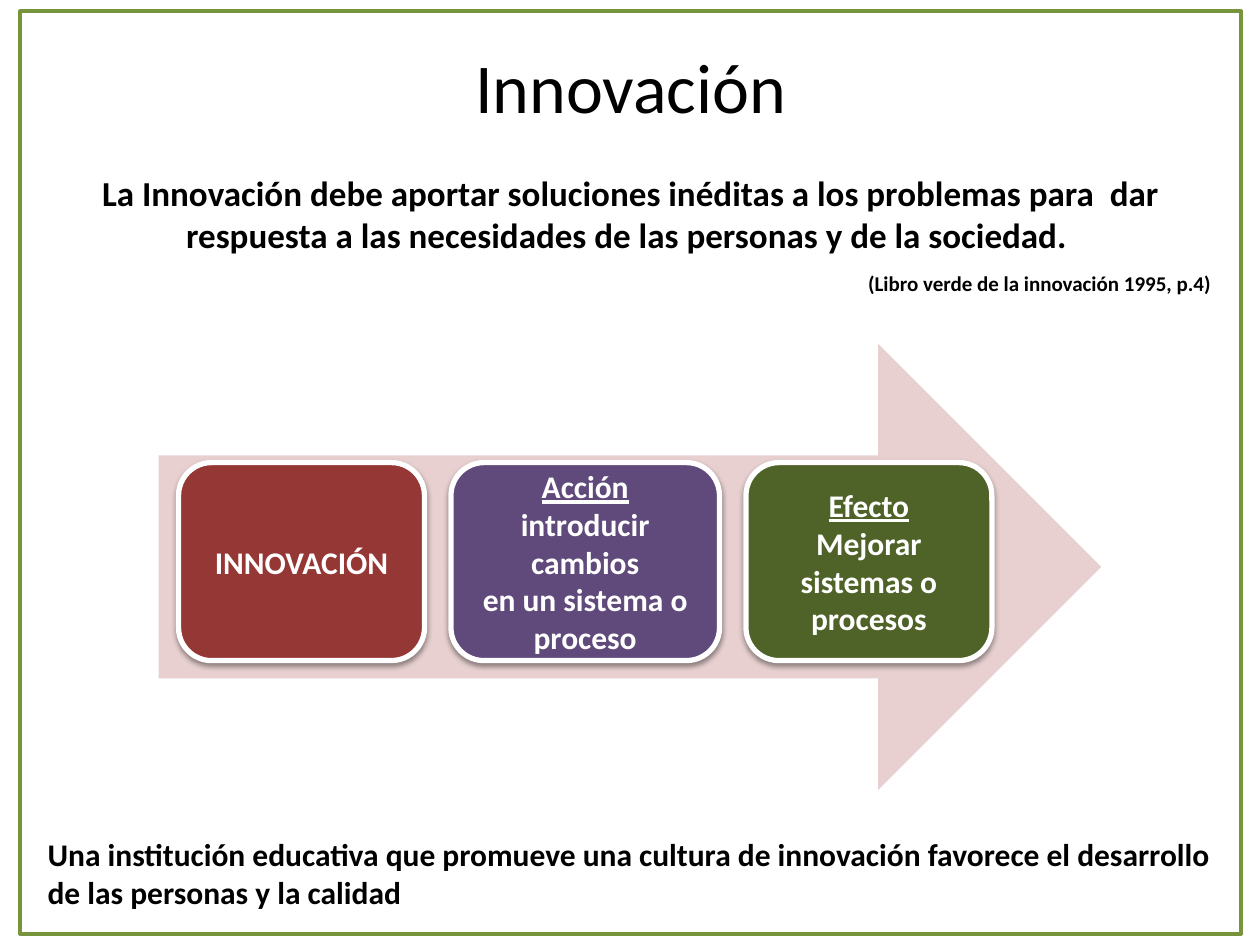
from lxml import etree
from pptx import Presentation
from pptx.dml.color import RGBColor
from pptx.enum import shapes, text
from pptx.oxml import ns
from pptx.util import Inches, Pt

FONT = "Calibri"
COLORS = {
    "ink": "000000", "white": "FFFFFF", "frame": "77933C", "arrow": "E8D0D0",
    "red": "953735", "purple": "604A7B", "green": "4F6228",
}
W, H = 10, 7.5  # slide size in inches
CARD_GAP = 0.028  # share of the arrow's width
CARDS = [  # fill, share of the arrow's width, heading, lines
    ("red", 0.261, None, ["INNOVACIÓN"]),
    ("purple", 0.285, "Acción", ["introducir cambios", "en un sistema o proceso"]),
    ("green", 0.261, "Efecto", ["Mejorar sistemas o procesos"]),
]


def rgb(name):
    return RGBColor.from_string(COLORS[name])


def inside(box, x, y, w, h):
    """Box given as shares of another box."""
    left, top, width, height = box
    return left + x * width, top + y * height, w * width, h * height


def add_text(tf, words, size=18, color="ink", bold=True, underline=False,
             align=text.PP_ALIGN.CENTER, first=True):
    p = tf.paragraphs[0] if first else tf.add_paragraph()
    p.alignment = align
    r = p.add_run()
    r.text = words
    r.font.name, r.font.size = FONT, Pt(size)
    r.font.bold, r.font.underline = bold, underline
    r.font.color.rgb = rgb(color)


def add_textbox(slide, box, words, wrap=True, anchor=text.MSO_ANCHOR.TOP, **fmt):
    tf = slide.shapes.add_textbox(*map(Inches, box)).text_frame
    tf.word_wrap, tf.vertical_anchor = wrap, anchor
    add_text(tf, words, **fmt)


def add_shape(slide, kind, box, fill=None, line=None, width=1):
    sp = slide.shapes.add_shape(kind, *map(Inches, box))
    sp.shadow.inherit = False
    if fill:
        sp.fill.solid()
        sp.fill.fore_color.rgb = rgb(fill)
    else:
        sp.fill.background()
    if line:
        sp.line.color.rgb, sp.line.width = rgb(line), Pt(width)
    else:
        sp.line.fill.background()
    return sp


def add_shadow(sp):
    effects = sp._element.spPr.find(ns.qn("a:effectLst"))
    shadow = etree.SubElement(effects, ns.qn("a:outerShdw"), blurRad=str(Pt(3.1)),
                              dist=str(Pt(1.6)), dir="5400000", rotWithShape="0")
    color = etree.SubElement(shadow, ns.qn("a:srgbClr"), val=COLORS["ink"])
    etree.SubElement(color, ns.qn("a:alpha"), val="38000")


def add_header(slide, box):
    # Title, statement and its source
    add_textbox(slide, inside(box, 0, 0, 1, 0.4), "Innovación", size=40, bold=False,
                anchor=text.MSO_ANCHOR.MIDDLE)
    add_textbox(slide, inside(box, 0, 0.4, 1, 0.26),
                "La Innovación debe aportar soluciones inéditas a los problemas para  dar "
                "respuesta a las necesidades de las personas y de la sociedad. ", size=20)
    add_textbox(slide, inside(box, 0.68, 0.65, 0.31, 0.1),
                "(Libro verde de la innovación 1995, p.4)", wrap=False, size=12)


def add_card(slide, box, fill, heading, lines):
    sp = add_shape(slide, shapes.MSO_SHAPE.ROUNDED_RECTANGLE, box, fill, "white", 3)
    add_shadow(sp)
    tf = sp.text_frame
    tf.word_wrap, tf.vertical_anchor = True, text.MSO_ANCHOR.MIDDLE
    tf.margin_left = tf.margin_right = tf.margin_top = tf.margin_bottom = Inches(0.14)
    if heading:
        add_text(tf, heading, color="white", underline=True)
    for i, words in enumerate(lines):
        add_text(tf, words, color="white", first=not heading and i == 0)


def add_process(slide, box):
    # Arrow with the cards laid along it at equal gaps
    add_shape(slide, shapes.MSO_SHAPE.RIGHT_ARROW, box, "arrow")
    x = 0.021
    for fill, share, heading, lines in CARDS:
        add_card(slide, inside(box, x, 0.266, share, 0.444), fill, heading, lines)
        x += share + CARD_GAP


def add_closing(slide, box):
    add_textbox(slide, box,
                "Una institución educativa que promueve una cultura de innovación "
                "favorece el desarrollo de las personas y la calidad",
                align=text.PP_ALIGN.LEFT)


def main():
    prs = Presentation()
    prs.slide_width, prs.slide_height = Inches(W), Inches(H)
    slide = prs.slides.add_slide(prs.slide_layouts[6])
    page = (0, 0, W, H)
    add_header(slide, inside(page, 0.016, 0.007, 0.969, 0.42))
    add_process(slide, inside(page, 0.126, 0.364, 0.748, 0.472))
    # Frame around the page
    add_shape(slide, shapes.MSO_SHAPE.RECTANGLE,
              inside(page, 0.016, 0.012, 0.969, 0.976), line="frame", width=2.25)
    add_closing(slide, inside(page, 0.028, 0.877, 0.953, 0.095))
    prs.save("out.pptx")


if __name__ == "__main__":
    main()
